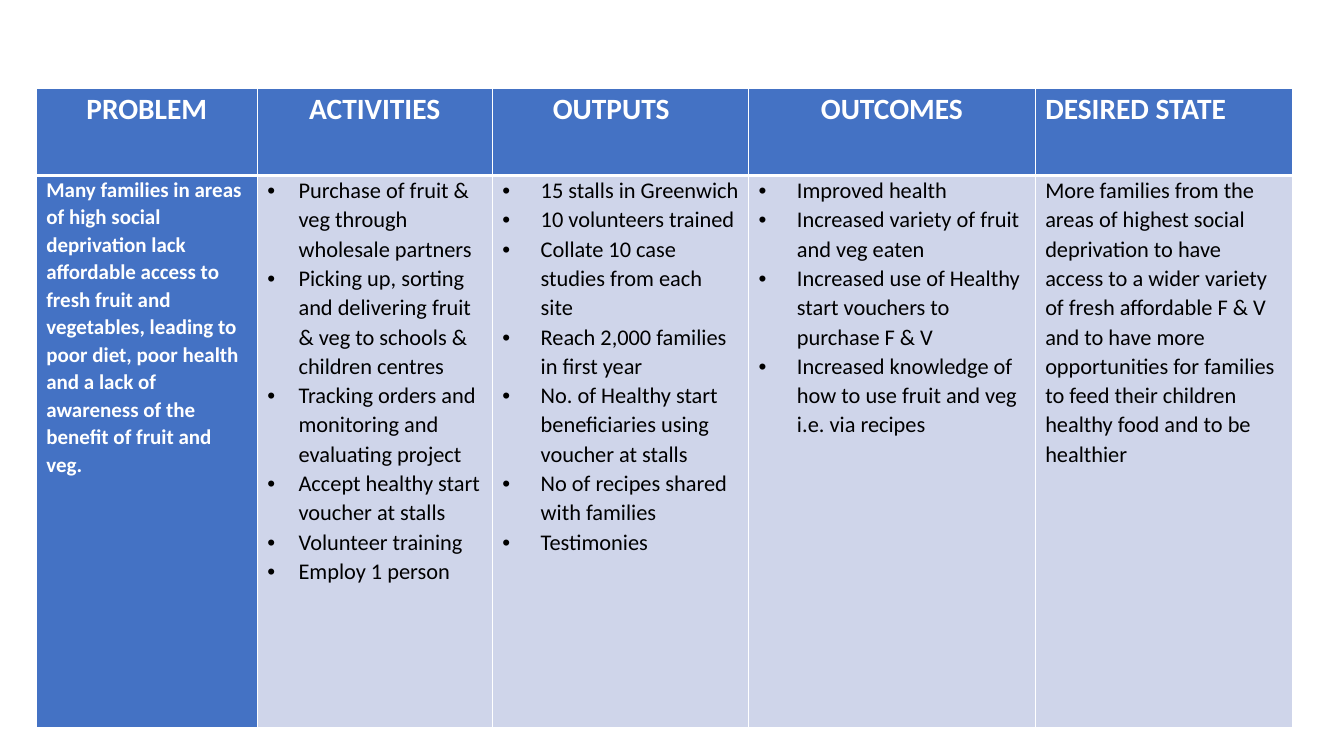
from lxml.etree import SubElement
from pptx import Presentation
from pptx.dml.color import RGBColor
from pptx.enum.text import PP_ALIGN
from pptx.oxml.ns import qn
from pptx.util import Inches, Pt

BLUE = RGBColor(0x44, 0x72, 0xC4)
PALE_BLUE = RGBColor(0xCF, 0xD5, 0xEA)
WHITE = RGBColor(0xFF, 0xFF, 0xFF)
BLACK = RGBColor(0, 0, 0)

HEADING_FONT = {"name": "Calibri", "size": Pt(21), "bold": True}
PROBLEM_FONT = {"name": "Calibri", "size": Pt(15), "bold": True}
BODY_FONT = {"name": "Calibri", "size": Pt(16), "bold": False}
CELL_MARGINS = {
    "margin_left": Inches(0.1), "margin_right": Inches(0.1),
    "margin_top": 0, "margin_bottom": 0,
}
HEADER_RULE, THIN_RULE = Pt(3), Pt(1)

TABLE_BOX = (Inches(0.36), Inches(0.88), Inches(12.46), Inches(6.34))
COLUMN_WIDTHS = (2.19, 2.33, 2.54, 2.84, 2.55)
ROW_HEIGHTS = (0.86, 5.48)

# Heading, alignment, first-line indent
HEADINGS = [
    ("PROBLEM", PP_ALIGN.CENTER, 0),
    ("ACTIVITIES", PP_ALIGN.CENTER, 0),
    ("OUTPUTS", PP_ALIGN.LEFT, 0.5),
    ("OUTCOMES", PP_ALIGN.CENTER, 0),
    ("DESIRED STATE", PP_ALIGN.LEFT, 0),
]
PROBLEM = [
    "Many families in areas of high social deprivation lack affordable access "
    "to fresh fruit and vegetables, leading to poor diet, poor health and a "
    "lack of awareness of the benefit of fruit and veg.",
]
ACTIVITIES = [
    "Purchase of fruit & veg through wholesale partners",
    "Picking up, sorting and delivering fruit & veg to schools & children centres",
    "Tracking orders and monitoring and evaluating project",
    "Accept healthy start voucher at stalls",
    "Volunteer training",
    "Employ 1 person",
]
OUTPUTS = [
    "15 stalls in Greenwich",
    "10 volunteers trained",
    "Collate 10 case studies from each site",
    "Reach 2,000 families in first year",
    "No. of Healthy start beneficiaries using voucher at stalls",
    "No of recipes shared with families",
    "Testimonies",
]
OUTCOMES = [
    "Improved health",
    "Increased variety of fruit and veg eaten",
    "Increased use of Healthy start vouchers to purchase F & V",
    "Increased knowledge of how to use fruit and veg i.e. via recipes",
]
DESIRED_STATE = [
    "More families from the areas of highest social deprivation to have access "
    "to a wider variety of fresh affordable F & V and to have more "
    "opportunities for families to feed their children healthy food and to be "
    "healthier",
]
# Paragraphs, bullet indent (0 for plain text)
BODY = [(PROBLEM, 0), (ACTIVITIES, 0.31), (OUTPUTS, 0.38), (OUTCOMES, 0.38),
        (DESIRED_STATE, 0)]


def set_attributes(target, values):
    for name, value in values.items():
        setattr(target, name, value)


def style_cell(cell, fill, top, bottom):
    """Set margins, white borders and fill; top and bottom are rule widths."""
    set_attributes(cell, CELL_MARGINS)
    properties = cell._tc.get_or_add_tcPr()
    widths = {"a:lnL": THIN_RULE, "a:lnR": THIN_RULE, "a:lnT": top, "a:lnB": bottom}
    for tag, width in widths.items():
        line = SubElement(properties, qn(tag), w=str(width))
        color_fill = SubElement(line, qn("a:solidFill"))
        SubElement(color_fill, qn("a:srgbClr"), val=str(WHITE))
    cell.fill.solid()
    cell.fill.fore_color.rgb = fill


def write_paragraphs(cell, texts, font, color, alignment=PP_ALIGN.LEFT,
                     bullet_indent=0, first_line=0):
    frame = cell.text_frame
    frame.text = "\n".join(texts)
    for paragraph in frame.paragraphs:
        set_attributes(paragraph, {
            "alignment": alignment, "line_spacing": 1.07,
            "space_after": Pt(0 if bullet_indent else 8),
        })
        set_attributes(paragraph.runs[0].font, font)
        paragraph.runs[0].font.color.rgb = color
        properties = paragraph._p.get_or_add_pPr()
        properties.set("marL", str(Inches(bullet_indent)))
        properties.set("indent", str(Inches(first_line - bullet_indent)))
        if bullet_indent:
            SubElement(properties, qn("a:buFont"), typeface="Arial")
            SubElement(properties, qn("a:buChar"), char="•")


def fill_heading_row(table):
    for column, (heading, alignment, first_line) in enumerate(HEADINGS):
        cell = table.cell(0, column)
        style_cell(cell, BLUE, THIN_RULE, HEADER_RULE)
        write_paragraphs(cell, [heading], HEADING_FONT, WHITE, alignment,
                         first_line=first_line)


def fill_body_row(table):
    for column, (texts, bullet_indent) in enumerate(BODY):
        cell = table.cell(1, column)
        is_problem = column == 0
        style_cell(cell, BLUE if is_problem else PALE_BLUE, HEADER_RULE, THIN_RULE)
        write_paragraphs(cell, texts, PROBLEM_FONT if is_problem else BODY_FONT,
                         WHITE if is_problem else BLACK,
                         bullet_indent=bullet_indent)


def add_logic_model(slide, box):
    """Add the problem-to-desired-state table in the given box."""
    table = slide.shapes.add_table(len(ROW_HEIGHTS), len(COLUMN_WIDTHS), *box).table
    _, _, width, height = box
    for column, share in zip(table.columns, COLUMN_WIDTHS):
        column.width = int(width * share / sum(COLUMN_WIDTHS))
    for row, share in zip(table.rows, ROW_HEIGHTS):
        row.height = int(height * share / sum(ROW_HEIGHTS))
    fill_heading_row(table)
    fill_body_row(table)


def main():
    presentation = Presentation()
    presentation.slide_width = Inches(13.33)
    presentation.slide_height = Inches(7.5)
    slide = presentation.slides.add_slide(presentation.slide_layouts[6])
    add_logic_model(slide, TABLE_BOX)
    presentation.save("out.pptx")


if __name__ == "__main__":
    main()
